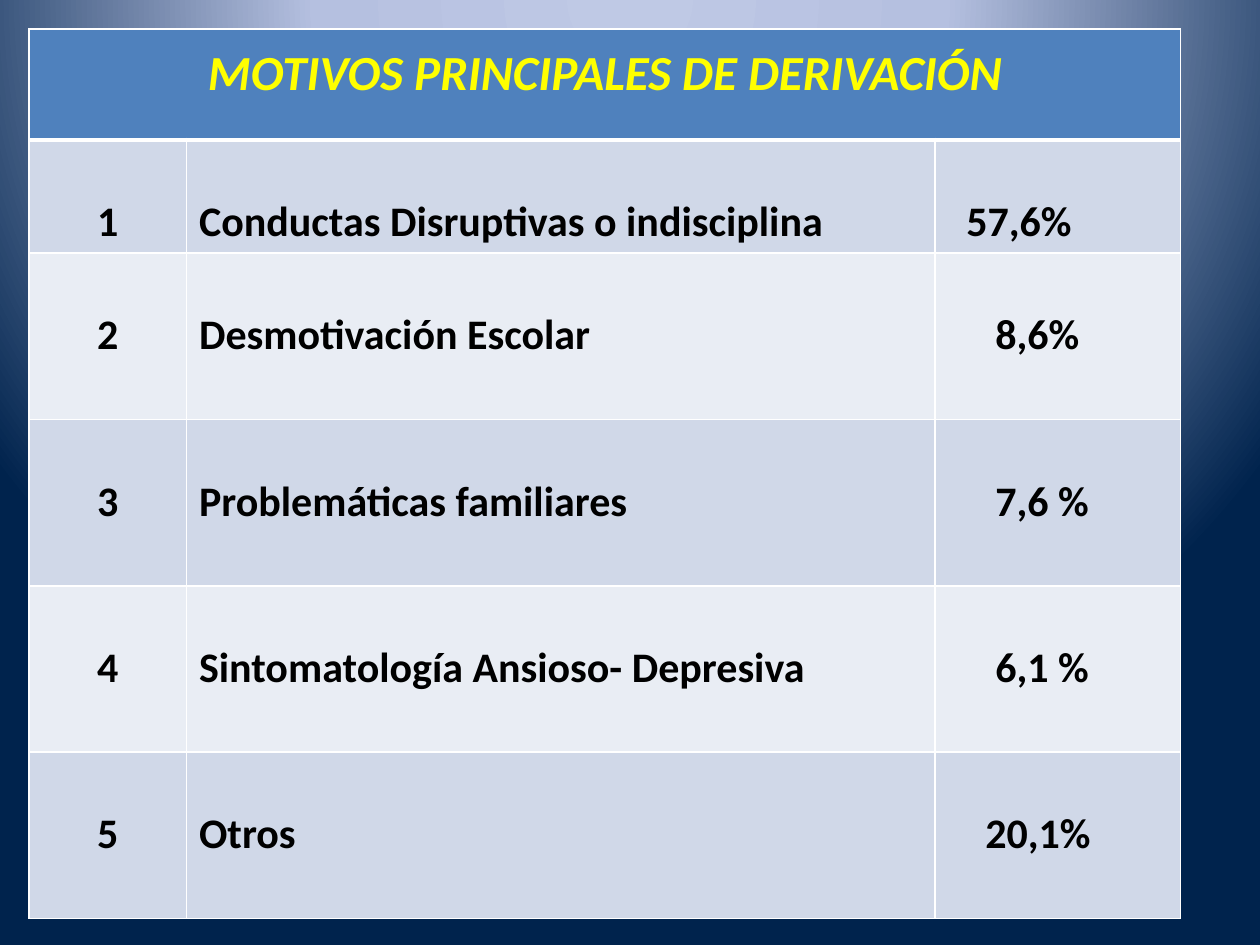
"""Build a slide with a table of the main reasons for referral."""
from pptx import Presentation
from pptx.dml.color import RGBColor
from pptx.enum.text import PP_ALIGN
from pptx.oxml import parse_xml
from pptx.util import Inches, Pt

CENTER, LEFT = PP_ALIGN.CENTER, PP_ALIGN.LEFT
NAMESPACE = 'xmlns:a="http://schemas.openxmlformats.org/drawingml/2006/main"'
PRESENTATION_NAMESPACE = 'xmlns:p="http://schemas.openxmlformats.org/presentationml/2006/main"'
FONT = "Calibri"
COLORS = {
    "header": "4F81BD", "title": "FFFF00", "text": "000000", "border": "FFFFFF",
    "odd": "D0D8E8", "even": "E9EDF4",
}
BACKGROUND_STOPS = [(0, "BFC9E5"), (40, "B5C0E0"), (100, "00234D")]

TITLE = "MOTIVOS PRINCIPALES DE DERIVACIÓN"
REASONS = [
    ("Conductas Disruptivas o indisciplina", "57,6%", 0.25),
    ("Desmotivación Escolar", "8,6%", 0.48),
    ("Problemáticas familiares", "7,6 %", 0.48),
    ("Sintomatología Ansioso- Depresiva", "6,1 %", 0.48),
    ("Otros", "20,1%", 0.4),
]
TABLE_LEFT = TABLE_TOP = 0.23
COLUMN_WIDTHS = [1.25, 5.94, 1.95]
ROW_HEIGHTS = [0.88, 0.9] + [1.32] * (len(REASONS) - 1)
TEXT_TOP = 0.45
SIDE_MARGIN = 0.1


def set_background(slide):
    stops = "".join(
        f'<a:gs pos="{position * 1000}"><a:srgbClr val="{color}"/></a:gs>'
        for position, color in BACKGROUND_STOPS
    )
    background = parse_xml(
        f'<p:bg {PRESENTATION_NAMESPACE} {NAMESPACE}><p:bgPr><a:gradFill rotWithShape="1">'
        f'<a:gsLst>{stops}</a:gsLst><a:path path="circle">'
        '<a:fillToRect l="50000" t="-80000" r="50000" b="180000"/></a:path>'
        '</a:gradFill><a:effectLst/></p:bgPr></p:bg>'
    )
    slide.element.cSld.insert(0, background)


def set_borders(cell, top=1, bottom=1):
    properties = cell._tc.get_or_add_tcPr()
    widths = {"lnL": 1, "lnR": 1, "lnT": top, "lnB": bottom}
    for index, (side, width) in enumerate(widths.items()):
        properties.insert(index, parse_xml(
            f'<a:{side} {NAMESPACE} w="{Pt(width)}"><a:solidFill>'
            f'<a:srgbClr val="{COLORS["border"]}"/></a:solidFill></a:{side}>'
        ))


def write_cell(cell, text, fill, color="text", size=24, alignment=LEFT, italic=False):
    cell.fill.solid()
    cell.fill.fore_color.rgb = RGBColor.from_string(COLORS[fill])
    cell.text_frame.text = text
    paragraph = cell.text_frame.paragraphs[0]
    paragraph.alignment = alignment
    font = paragraph.runs[0].font
    font.name, font.size, font.bold, font.italic = FONT, Pt(size), True, italic
    font.color.rgb = RGBColor.from_string(COLORS[color])
    return paragraph


def add_reasons_table(slide):
    table = slide.shapes.add_table(
        len(ROW_HEIGHTS), len(COLUMN_WIDTHS), Inches(TABLE_LEFT), Inches(TABLE_TOP),
        Inches(sum(COLUMN_WIDTHS)), Inches(sum(ROW_HEIGHTS)),
    ).table
    for column, width in zip(table.columns, COLUMN_WIDTHS):
        column.width = Inches(width)
    for row, height in zip(table.rows, ROW_HEIGHTS):
        row.height = Inches(height)

    header = table.cell(0, 0)
    header.merge(table.cell(0, len(COLUMN_WIDTHS) - 1))
    title = write_cell(header, TITLE, "header", "title", 28, CENTER, True)
    title.line_spacing = 1.15
    for cell in table.rows[0].cells:
        set_borders(cell, bottom=3)

    for number, (reason, share, indent) in enumerate(REASONS, start=1):
        fill = "odd" if number % 2 else "even"
        contents = [
            (str(number), CENTER, SIDE_MARGIN),
            (reason, LEFT, SIDE_MARGIN),
            (share, LEFT, indent),
        ]
        for cell, (text, alignment, margin) in zip(table.rows[number].cells, contents):
            write_cell(cell, text, fill, alignment=alignment)
            cell.margin_top, cell.margin_bottom = Inches(TEXT_TOP), 0
            cell.margin_left = Inches(margin)
            set_borders(cell, top=3 if number == 1 else 1)


def main():
    presentation = Presentation()
    presentation.slide_width, presentation.slide_height = Inches(10), Inches(7.5)
    slide = presentation.slides.add_slide(presentation.slide_layouts[6])
    set_background(slide)
    add_reasons_table(slide)
    presentation.save("out.pptx")


if __name__ == "__main__":
    main()
